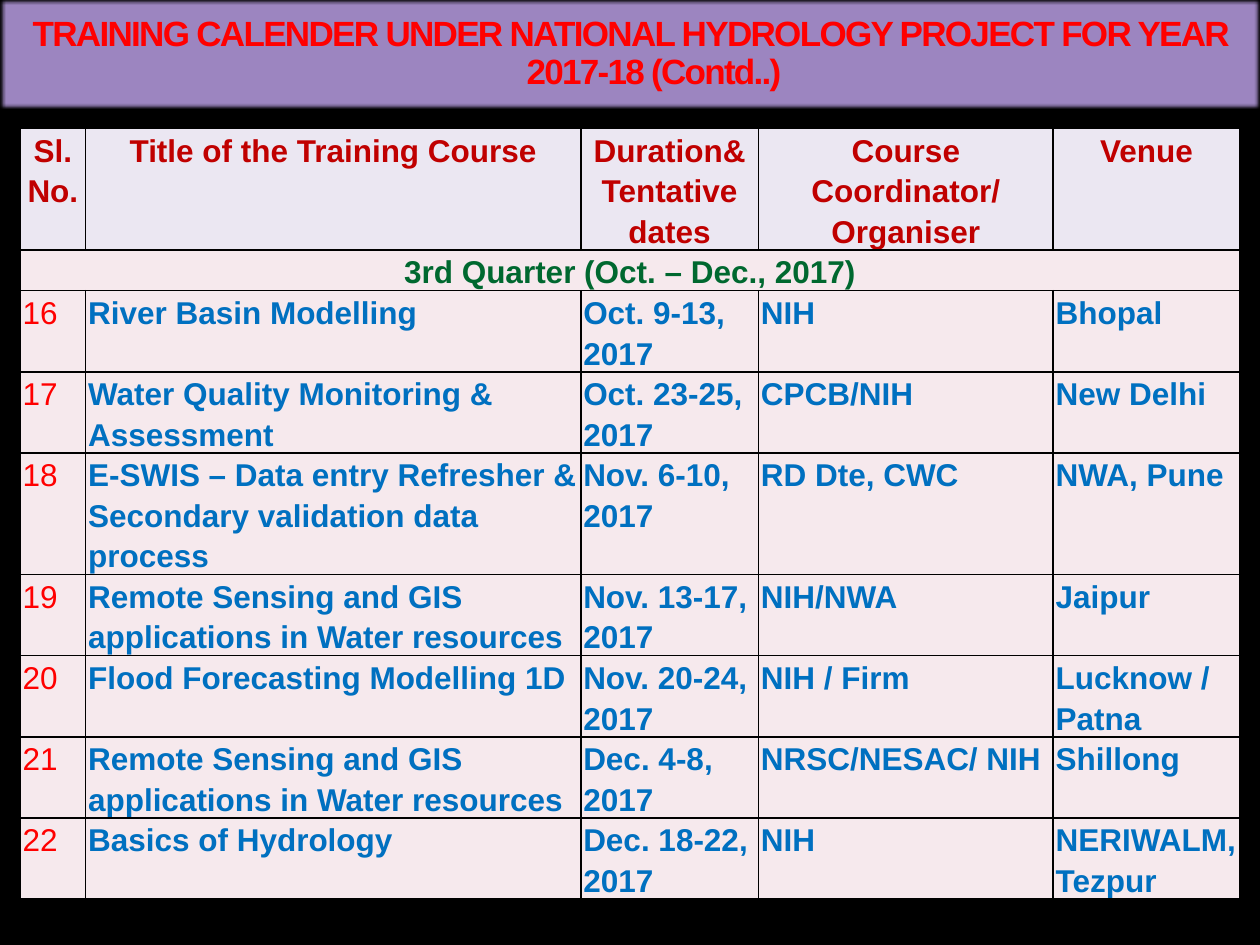
from lxml.etree import SubElement
from pptx import Presentation
from pptx.dml.color import RGBColor
from pptx.enum.text import MSO_ANCHOR, MSO_AUTO_SIZE, PP_ALIGN
from pptx.oxml import parse_xml
from pptx.oxml.ns import qn
from pptx.util import Inches, Pt

TITLE = "TRAINING CALENDER UNDER NATIONAL HYDROLOGY PROJECT FOR YEAR 2017-18 (Contd..)"
HEADINGS = ["Sl. No.", "Title of the Training Course", "Duration& Tentative dates",
            "Course Coordinator/\nOrganiser", "Venue"]
QUARTER = "3rd Quarter (Oct. – Dec., 2017)"
COURSES = [
    ("16", "River Basin Modelling", "Oct. 9-13, 2017", "NIH", "Bhopal"),
    ("17", "Water Quality Monitoring & Assessment", "Oct. 23-25, 2017", "CPCB/NIH", "New Delhi"),
    ("18", "E-SWIS – Data entry Refresher & Secondary validation data process",
     "Nov. 6-10, 2017", "RD Dte, CWC", "NWA, Pune"),
    ("19", "Remote Sensing and GIS applications in Water resources",
     "Nov. 13-17, 2017", "NIH/NWA", "Jaipur"),
    ("20", "Flood Forecasting Modelling 1D", "Nov. 20-24, 2017", "NIH / Firm", "Lucknow / Patna"),
    ("21", "Remote Sensing and GIS applications in Water resources",
     "Dec. 4-8, 2017", "NRSC/NESAC/ NIH", "Shillong"),
    ("22", "Basics of Hydrology", "Dec. 18-22, 2017", "NIH", "NERIWALM, Tezpur"),
]
COLUMN_WIDTHS = [0.52, 3.93, 1.41, 2.34, 1.48]
ROW_LINES = [3, 1, 2, 2, 3, 2, 2, 2, 2]
LINE_HEIGHT = 0.32
DRAWING = 'xmlns:a="http://schemas.openxmlformats.org/drawingml/2006/main"'


def paint(target, color):
    target.solid()
    target.fore_color.rgb = RGBColor.from_string(color)


def add_span(para, text, size, color, bold=True):
    span = para.add_run()
    span.text = text
    span.font.name = "Arial"
    span.font.size = Pt(size)
    span.font.bold = bold
    paint(span.font.fill, color)
    return span


def add_borders(cell):
    properties = cell._tc.get_or_add_tcPr()
    for index, side in enumerate(("lnL", "lnR", "lnT", "lnB")):
        properties.insert(index, parse_xml(
            f'<a:{side} {DRAWING} w="12700"><a:solidFill><a:srgbClr val="000000"/>'
            f'</a:solidFill></a:{side}>'))


def fill_cell(cell, text, color, background, align=PP_ALIGN.LEFT, bold=True):
    cell.margin_left = cell.margin_right = Inches(0.02)
    cell.margin_top = cell.margin_bottom = 0
    paint(cell.fill, background)
    for index, line in enumerate(text.split("\n")):
        frame = cell.text_frame
        para = frame.add_paragraph() if index else frame.paragraphs[0]
        para.alignment = align
        para.line_spacing = 1.15
        add_span(para, line, 18, color, bold)


def add_title(page):
    banner = page.shapes.title
    banner.left, banner.top, banner.width, banner.height = 0, 0, Inches(10), Inches(0.86)
    paint(banner.fill, "9C85C0")
    banner._element.spPr.append(parse_xml(
        f'<a:effectLst {DRAWING}><a:outerShdw blurRad="95250" dist="0"><a:srgbClr val="000000">'
        '<a:alpha val="50000"/></a:srgbClr></a:outerShdw><a:softEdge rad="31750"/></a:effectLst>'))
    frame = banner.text_frame
    frame.word_wrap = True
    frame.auto_size = MSO_AUTO_SIZE.NONE
    frame.vertical_anchor = MSO_ANCHOR.MIDDLE
    para = frame.paragraphs[0]
    para.alignment = PP_ALIGN.CENTER
    para.line_spacing = 0.9
    indents = para._p.get_or_add_pPr()
    indents.set("marL", str(Inches(0.38)))
    indents.set("indent", str(Inches(-0.38)))
    span = add_span(para, TITLE, 20, "FF0000")
    properties = span._r.get_or_add_rPr()
    properties.set("spc", "-100")
    outline = parse_xml(f'<a:ln {DRAWING} w="3175"><a:solidFill/></a:ln>')
    color = SubElement(outline[0], qn("a:srgbClr"), val="3C4422")
    SubElement(color, qn("a:alpha"), val="25000")
    properties.insert(0, outline)


def add_calendar(page):
    table = page.shapes.add_table(
        len(ROW_LINES), len(COLUMN_WIDTHS), Inches(0.16), Inches(1.02),
        Inches(sum(COLUMN_WIDTHS)), Inches(LINE_HEIGHT * sum(ROW_LINES))).table
    for column, width in zip(table.columns, COLUMN_WIDTHS):
        column.width = Inches(width)
    for row, lines in zip(table.rows, ROW_LINES):
        row.height = Inches(LINE_HEIGHT * lines)
    for column, heading in enumerate(HEADINGS):
        fill_cell(table.cell(0, column), heading, "C00000", "EBE7F2", PP_ALIGN.CENTER)
    table.cell(1, 0).merge(table.cell(1, len(HEADINGS) - 1))
    fill_cell(table.cell(1, 0), QUARTER, "00682F", "F6E9ED", PP_ALIGN.CENTER)
    for row, course in enumerate(COURSES, start=2):
        for column, text in enumerate(course):
            color = "0070C0" if column else "FF0000"
            fill_cell(table.cell(row, column), text, color, "F6E9ED", bold=column > 0)
    for cell in table.iter_cells():
        add_borders(cell)


def main():
    """Build the training calendar slide."""
    deck = Presentation()
    deck.slide_width, deck.slide_height = Inches(10), Inches(7.5)
    page = deck.slides.add_slide(deck.slide_layouts[5])
    paint(page.background.fill, "000000")
    add_title(page)
    add_calendar(page)
    deck.save("out.pptx")


if __name__ == "__main__":
    main()
